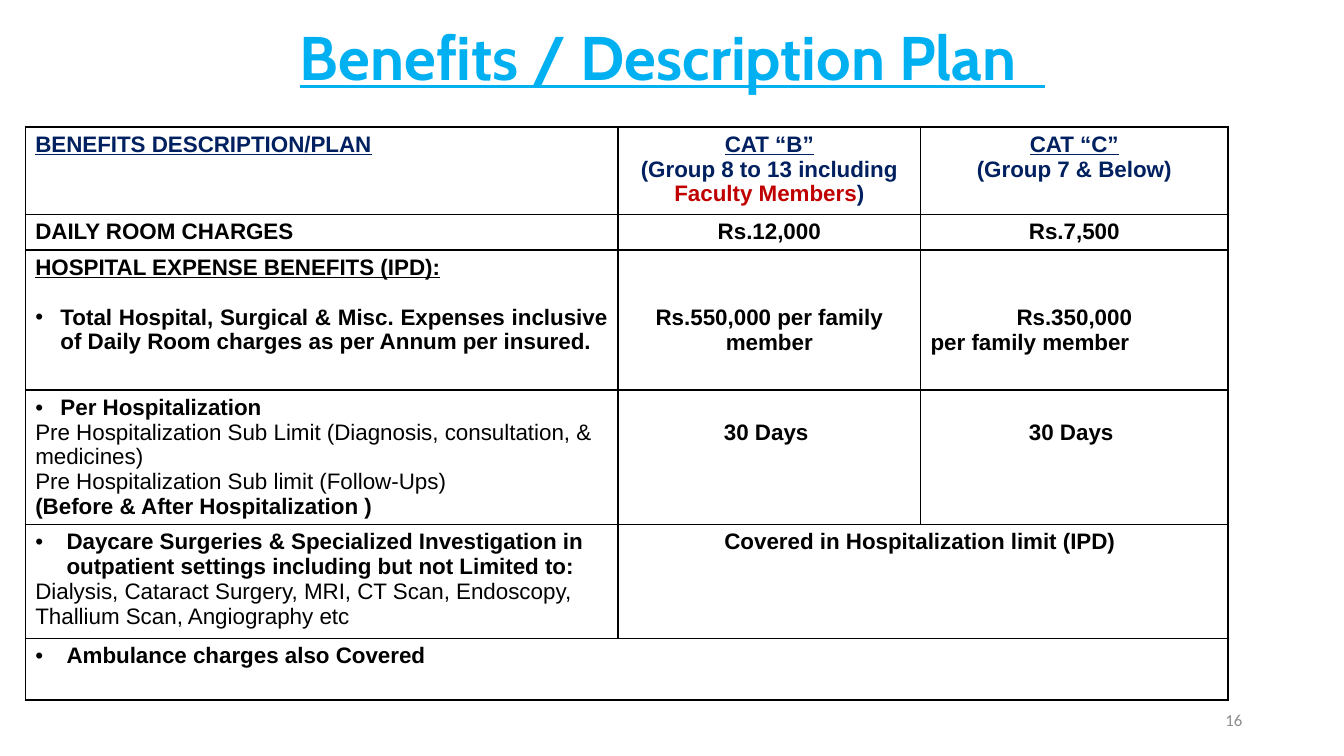
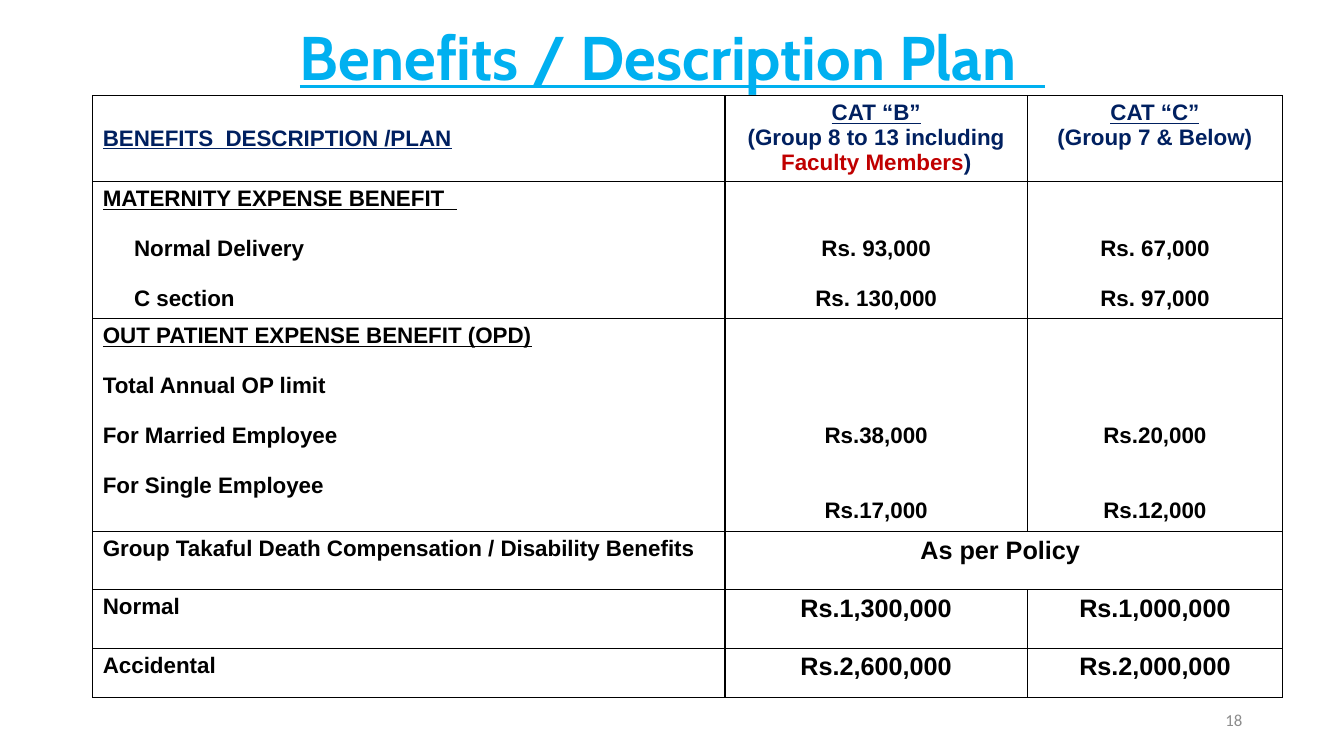
"""Build two benefit plan slides, each with a title, a bordered table and a page number."""
from dataclasses import dataclass
from typing import Any

from pptx import Presentation
from pptx.dml.color import RGBColor
from pptx.enum.text import MSO_AUTO_SIZE as AutoSize, MSO_ANCHOR as Anchor, PP_ALIGN as Align
from pptx.oxml import parse_xml
from pptx.oxml.ns import nsdecls
from pptx.util import Inches, Pt

SKY = RGBColor(0x00, 0xB0, 0xF0)
NAVY = RGBColor(0x00, 0x20, 0x60)
RED = RGBColor(0xC0, 0x00, 0x00)
BLACK = RGBColor(0x00, 0x00, 0x00)
GREY = RGBColor(0x8C, 0x8C, 0x8C)

TITLE = "Benefits / Description Plan  "
TITLE_FONT = dict(name="Cabin", size=Pt(44), bold=True, underline=True)
NUMBER_FONT = dict(name="Calibri", size=Pt(12))
LINE = Pt(17.9)
CELL_MARGIN = Inches(0.05)


@dataclass(frozen=True)
class Span:
    text: str
    color: RGBColor = BLACK
    bold: bool = True
    underline: bool = False
    size: int = 16


@dataclass(frozen=True)
class Para:
    spans: tuple[Span, ...]
    align: Align = Align.LEFT
    gap: int = 0
    indent: float = 0
    bullet: bool = False


@dataclass(frozen=True)
class Cell:
    paras: tuple[Para, ...]
    lead: int = 0
    columns: int = 1


@dataclass(frozen=True)
class Page:
    number: int
    left: float
    top: float
    widths: tuple[float, ...]
    heights: tuple[float, ...]
    rows: tuple[tuple[Cell, ...], ...]


def line(text: str, align: Align = Align.LEFT, gap: int = 0, indent: float = 0,
         bullet: bool = False, **style: Any) -> Para:
    """Return a paragraph made of one span."""
    return Para((Span(text, **style),), align, gap, indent, bullet)


def label(text: str, **style: Any) -> Cell:
    """Return a left-aligned cell with one line."""
    return Cell((line(text, **style),))


def value(*texts: str, lead: int = 0, gap: int = 0, columns: int = 1, size: int = 16) -> Cell:
    """Return a centred cell whose later lines follow a gap."""
    paras = tuple(line(text, Align.CENTER, gap if index else 0, size=size)
                  for index, text in enumerate(texts))
    return Cell(paras, lead, columns)


def category(name: str, *group: Span) -> Cell:
    """Return a heading cell for one employee category."""
    return Cell((line(name, Align.CENTER, color=NAVY, underline=True),
                 Para(group, Align.CENTER)))


CATEGORIES = (
    category("CAT “B”", Span("(Group 8 to 13 including ", NAVY),
             Span("Faculty Members", RED), Span(")", NAVY)),
    category("CAT “C”", Span("(Group 7 & Below)", NAVY)),
)

HOSPITAL = Page(
    16, 0.25, 1.26, (5.88, 3, 3.05), (0.87, 0.35, 1.39, 1.33, 1.13, 0.61),
    (
        (label("BENEFITS DESCRIPTION/PLAN", color=NAVY, underline=True), *CATEGORIES),
        (label("DAILY ROOM CHARGES"), value("Rs.12,000"), value("Rs.7,500")),
        (Cell((line("HOSPITAL EXPENSE BENEFITS (IPD):", underline=True),
               line("Total Hospital, Surgical & Misc. Expenses inclusive of Daily Room charges "
                    "as per Annum per insured. ", Align.JUSTIFY, 1, 0.25, True))),
         value("Rs.550,000 per family member", lead=2),
         Cell((line("Rs.350,000", Align.CENTER), line("per family member")), lead=2)),
        (Cell((line("Per Hospitalization", indent=0.25, bullet=True),
               line("Pre Hospitalization Sub Limit (Diagnosis, consultation, & medicines)",
                    bold=False),
               line("Pre Hospitalization Sub limit (Follow-Ups)", bold=False),
               line("(Before & After Hospitalization )"))),
         value("30 Days ", lead=1), value("30 Days ", lead=1)),
        (Cell((line("Daycare Surgeries & Specialized Investigation in outpatient settings "
                    "including but not Limited to:", indent=0.31, bullet=True),
               line("Dialysis, Cataract Surgery, MRI, CT Scan, Endoscopy, Thallium Scan, "
                    "Angiography etc", bold=False))),
         value("Covered in Hospitalization limit (IPD) ", columns=2)),
        (Cell((line("Ambulance charges also Covered", indent=0.31, bullet=True),), columns=3),),
    ),
)

MATERNITY = Page(
    18, 0.92, 0.95, (6.27, 3, 2.53), (0.85, 1.36, 2.11, 0.58, 0.58, 0.49),
    (
        (Cell((line("BENEFITS  DESCRIPTION /PLAN", color=NAVY, underline=True),), lead=1),
         *CATEGORIES),
        (Cell((line("MATERNITY EXPENSE BENEFIT  ", underline=True),
               line("Normal Delivery", gap=1, indent=0.31),
               line("C section", gap=1, indent=0.31))),
         value("Rs. 93,000", "Rs. 130,000", lead=2, gap=1),
         value("Rs. 67,000", "Rs. 97,000", lead=2, gap=1)),
        (Cell((line("OUT PATIENT EXPENSE BENEFIT (OPD)", underline=True),
               line("Total Annual OP limit", gap=1),
               line("For Married Employee", gap=1),
               line("For Single Employee", gap=1))),
         value("Rs.38,000", "Rs.17,000", lead=4, gap=2),
         value("Rs.20,000", "Rs.12,000", lead=4, gap=2)),
        (label("Group Takaful Death Compensation / Disability Benefits"),
         value("As per Policy ", columns=2, size=18)),
        (label("Normal"), value("Rs.1,300,000", size=18), value("Rs.1,000,000", size=18)),
        (label("Accidental"), value("Rs.2,600,000", size=18), value("Rs.2,000,000", size=18)),
    ),
)


def apply(target: Any, values: dict[str, Any]) -> None:
    """Set each named attribute on the target."""
    for name, setting in values.items():
        setattr(target, name, setting)


def write_span(para: Any, text: str, color: RGBColor, font: dict[str, Any]) -> None:
    """Add a formatted run to a paragraph."""
    run = para.add_run()
    run.text = text
    apply(run.font, font)
    run.font.color.rgb = color


def write_para(para: Any, content: Para) -> None:
    """Format a table paragraph and add its spans."""
    apply(para, dict(alignment=content.align, space_before=LINE * content.gap))
    properties = para._p.get_or_add_pPr()
    if content.indent:
        indent = Inches(content.indent)
        properties.set("marL", str(indent))
        properties.set("indent", str(-indent if content.bullet else 0))
    if content.bullet:
        properties.append(parse_xml(f'<a:buFont {nsdecls("a")} typeface="Arial"/>'))
        properties.append(parse_xml(f'<a:buChar {nsdecls("a")} char="•"/>'))
    for span in content.spans:
        write_span(para, span.text, span.color, dict(
            name="Arial", size=Pt(span.size), bold=span.bold, underline=span.underline))


def draw_borders(cell: Any) -> None:
    """Give a table cell thin black borders and no fill."""
    properties = cell._tc.get_or_add_tcPr()
    for side in ("lnL", "lnR", "lnT", "lnB"):
        properties.append(parse_xml(
            f'<a:{side} {nsdecls("a")} w="{Pt(1)}"><a:solidFill>'
            f'<a:srgbClr val="{BLACK}"/></a:solidFill></a:{side}>'))
    cell.fill.background()


def draw_table(slide: Any, page: Page) -> None:
    """Draw the benefits table of a page."""
    frame = slide.shapes.add_table(
        len(page.heights), len(page.widths), Inches(page.left), Inches(page.top),
        Inches(sum(page.widths)), Inches(sum(page.heights)))
    table = frame.table
    apply(table, dict(first_row=False, horz_banding=False))
    for column, width in zip(table.columns, page.widths):
        column.width = Inches(width)
    for row, height in zip(table.rows, page.heights):
        row.height = Inches(height)
    for cell in table.iter_cells():
        draw_borders(cell)
    for row_index, contents in enumerate(page.rows):
        column_index = 0
        for content in contents:
            cell = table.cell(row_index, column_index)
            column_index += content.columns
            if content.columns > 1:
                cell.merge(table.cell(row_index, column_index - 1))
            cell.margin_top = CELL_MARGIN + LINE * content.lead
            for index, para in enumerate(content.paras):
                text = cell.text_frame
                write_para(text.add_paragraph() if index else text.paragraphs[0], para)


def draw_text(box: Any, text: str, align: Align, color: RGBColor, font: dict[str, Any]) -> None:
    """Write one vertically centred line in a box."""
    frame = box.text_frame
    apply(frame, dict(word_wrap=True, auto_size=AutoSize.NONE, vertical_anchor=Anchor.MIDDLE))
    para = frame.paragraphs[0]
    apply(para, dict(alignment=align, line_spacing=0.9))
    write_span(para, text, color, font)


def draw_page(deck: Any, page: Page) -> None:
    """Add one slide with its title, table and number."""
    slide = deck.slides.add_slide(deck.slide_layouts.get_by_name("Title Only"))
    title = slide.shapes.title
    apply(title, dict(left=Inches(0.92), top=Inches(0.14),
                      width=Inches(11.5), height=Inches(0.92)))
    draw_text(title, TITLE, Align.CENTER, SKY, TITLE_FONT)
    draw_table(slide, page)
    number = slide.shapes.add_textbox(Inches(9.42), Inches(6.95), Inches(3), Inches(0.4))
    draw_text(number, str(page.number), Align.RIGHT, GREY, NUMBER_FONT)


def main() -> None:
    """Build and save the deck."""
    deck = Presentation()
    apply(deck, dict(slide_width=Inches(13.33), slide_height=Inches(7.5)))
    for page in (HOSPITAL, MATERNITY):
        draw_page(deck, page)
    deck.save("out.pptx")


if __name__ == "__main__":
    main()
